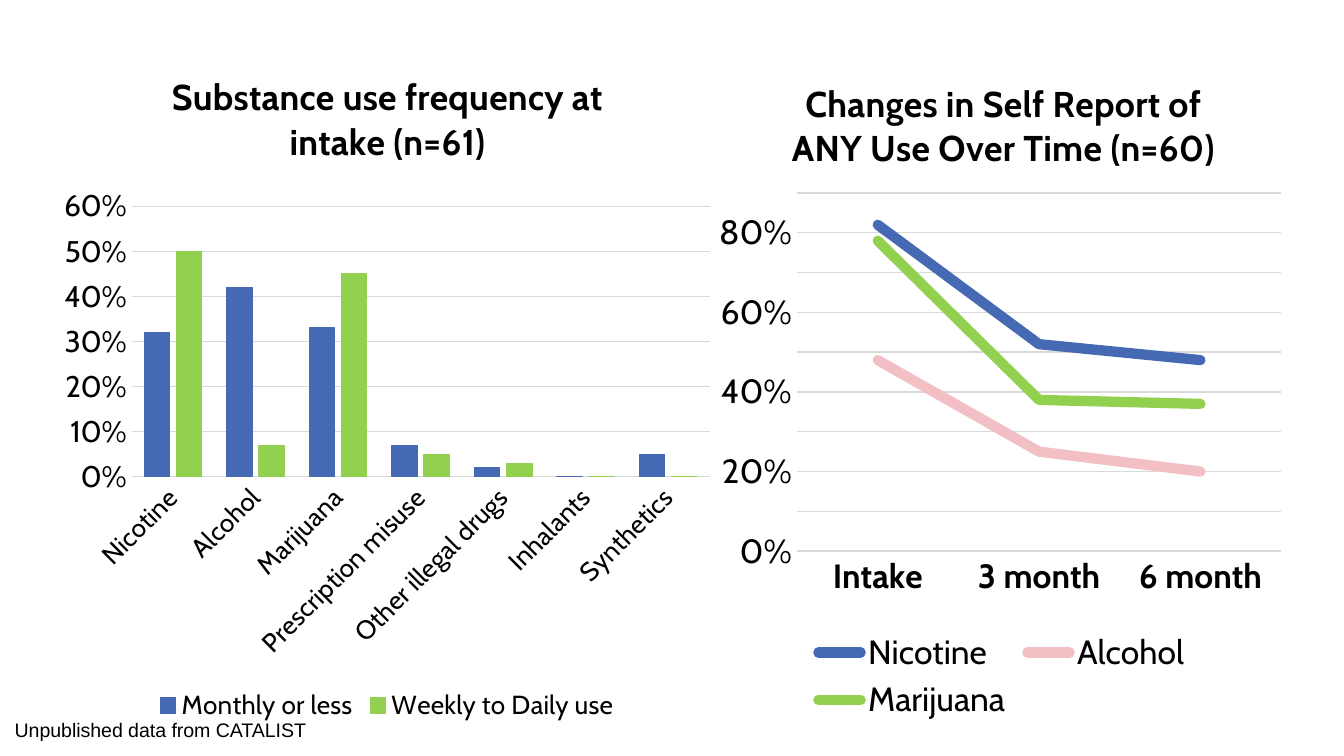
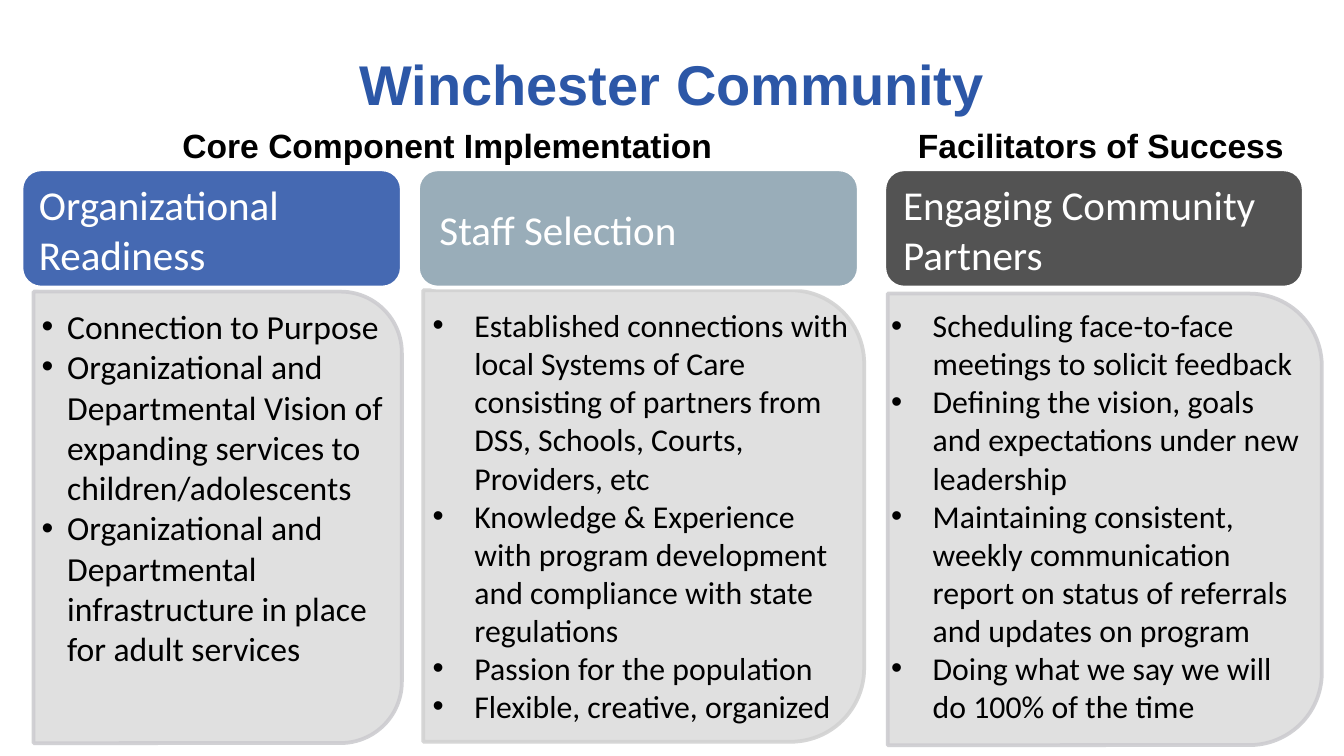
from lxml import etree
from pptx import Presentation
from pptx.chart.data import CategoryChartData
from pptx.dml.color import RGBColor
from pptx.enum.chart import XL_CHART_TYPE, XL_LEGEND_POSITION, XL_MARKER_STYLE, XL_TICK_MARK
from pptx.enum.shapes import MSO_SHAPE
from pptx.enum.text import MSO_ANCHOR, PP_ALIGN
from pptx.oxml import parse_xml
from pptx.oxml.ns import nsdecls, qn
from pptx.util import Inches, Pt

COLUMNS = XL_CHART_TYPE.COLUMN_CLUSTERED
LINES = XL_CHART_TYPE.LINE
BOTTOM = XL_LEGEND_POSITION.BOTTOM
NO_MARKER = XL_MARKER_STYLE.NONE
NO_TICK = XL_TICK_MARK.NONE
RECTANGLE = MSO_SHAPE.RECTANGLE
HEADER_SHAPE = MSO_SHAPE.ROUNDED_RECTANGLE
PANEL_SHAPE = MSO_SHAPE.ROUND_2_SAME_RECTANGLE
TOP, MIDDLE = MSO_ANCHOR.TOP, MSO_ANCHOR.MIDDLE
LEFT, CENTER = PP_ALIGN.LEFT, PP_ALIGN.CENTER

WHITE = RGBColor(0xFF, 0xFF, 0xFF)
BLACK = RGBColor(0x00, 0x00, 0x00)
BLUE = RGBColor(0x45, 0x69, 0xB2)
TITLE_BLUE = RGBColor(0x2C, 0x57, 0xA7)
GREEN = RGBColor(0x92, 0xD0, 0x50)
PINK = RGBColor(0xF2, 0xBF, 0xC4)
GRID = RGBColor(0xD9, 0xD9, 0xD9)
SLATE = RGBColor(0x99, 0xAD, 0xB9)
CHARCOAL = RGBColor(0x53, 0x53, 0x53)
PANEL_FILL = RGBColor(0xDD, 0xDD, 0xDD)
PANEL_LINE = RGBColor(0xCD, 0xCC, 0xD0)
PANEL_LINE_LIGHT = RGBColor(0xD2, 0xD2, 0xD2)


def add_text(page, place, lines, font, align=LEFT, anchor=TOP, inset=(0.05, 0.05), spacing=None, indent=0):
    box = page.shapes.add_textbox(*map(Inches, place))
    frame = box.text_frame
    frame.word_wrap = True
    frame.vertical_anchor = anchor
    frame.margin_left = frame.margin_right = Inches(inset[0])
    frame.margin_top = frame.margin_bottom = Inches(inset[1])
    for number, line in enumerate(lines):
        para = frame.paragraphs[0] if number == 0 else frame.add_paragraph()
        para.alignment = align
        para.line_spacing = spacing
        if indent:
            props = para._p.get_or_add_pPr()
            props.set("marL", str(Inches(indent)))
            props.set("indent", str(-Inches(indent)))
            etree.SubElement(props, qn("a:buFont")).set("typeface", "Arial")
            etree.SubElement(props, qn("a:buChar")).set("char", "•")
        span = para.add_run()
        span.text = line
        span.font.color.rgb = font["color"]
        for name in ("name", "size", "bold"):
            setattr(span.font, name, font.get(name))


def add_layout(parent, target, **fractions):
    old = parent.find(qn("c:layout"))
    if old is not None:
        parent.remove(old)
    values = "".join(f'<c:{key} val="{value}"/>' for key, value in fractions.items())
    layout = parse_xml(
        f'<c:layout {nsdecls("c")}><c:manualLayout>{target}'
        f'<c:xMode val="edge"/><c:yMode val="edge"/>{values}</c:manualLayout></c:layout>'
    )
    text = parent.find(qn("c:tx"))
    parent.insert(0 if text is None else 1, layout)


deck = Presentation()
deck.slide_width = Inches(10)
deck.slide_height = Inches(10 * 9 / 16)
blank = deck.slide_layouts[6]

page = deck.slides.add_slide(blank)
backing = page.shapes.add_shape(RECTANGLE, Inches(5.05), Inches(0.87), Inches(4.58), Inches(4.49))
backing.shadow.inherit = False
backing.fill.solid()
backing.fill.fore_color.rgb = WHITE
backing.line.fill.background()

charts = [
    {
        "kind": COLUMNS, "place": (0.38, 0.38, 5, 5.03),
        "title": "Substance use frequency at intake (n=61)",
        "title_at": {"x": 0.17, "y": 0.02},
        "plot_at": {"x": 0.12, "y": 0.23, "w": 0.86, "h": 0.4},
        "size": 16, "category_size": 14, "legend_size": 14, "bold": False,
        "top": 0.6, "step": 0.1, "tilt": -45,
        "categories": ["Nicotine", "Alcohol", "Marijuana", "Prescription misuse",
                       "Other illegal drugs", "Inhalants", "Synthetics"],
        "series": [
            ("Monthly or less", (0.32, 0.42, 0.33, 0.07, 0.02, 0, 0.05), BLUE),
            ("Weekly to Daily use", (0.5, 0.07, 0.45, 0.05, 0.03, 0, 0), GREEN),
        ],
    },
    {
        "kind": LINES, "place": (5.28, 0.38, 4.34, 5.03),
        "title": "Changes in Self Report of ANY Use Over Time (n=60)",
        "title_at": {"x": 0.13, "y": 0.03},
        "plot_at": {"x": 0.15, "y": 0.21, "w": 0.83, "h": 0.53},
        "size": 18, "category_size": 18, "legend_size": 18, "bold": True,
        "top": 0.9, "step": 0.1, "tilt": 0,
        "categories": ["Intake", "3 month", "6 month"],
        "series": [
            ("Nicotine", (0.82, 0.52, 0.48), BLUE),
            ("Alcohol", (0.48, 0.25, 0.2), PINK),
            ("Marijuana", (0.78, 0.38, 0.37), GREEN),
        ],
    },
]

for item in charts:
    data = CategoryChartData(number_format="0%")
    data.categories = item["categories"]
    for name, values, color in item["series"]:
        data.add_series(name, values)
    chart = page.shapes.add_chart(item["kind"], *map(Inches, item["place"]), data).chart
    chart.font.name = "Cabin"
    chart.font.size = Pt(item["size"])
    chart.font.color.rgb = BLACK

    chart.has_title = True
    frame = chart.chart_title.text_frame
    frame.text = item["title"]
    chart.has_legend = True
    legend = chart.legend
    legend.position = BOTTOM
    legend.include_in_layout = False
    category_axis, value_axis = chart.category_axis, chart.value_axis
    fonts = [
        (frame.paragraphs[0].runs[0].font, 19.2, True),
        (legend.font, item["legend_size"], False),
        (category_axis.tick_labels.font, item["category_size"], item["bold"]),
        (value_axis.tick_labels.font, item["size"], False),
    ]
    for font, size, bold in fonts:
        font.name = "Cabin"
        font.size = Pt(size)
        font.bold = bold
        font.color.rgb = BLACK

    for axis in (category_axis, value_axis):
        axis.major_tick_mark = axis.minor_tick_mark = NO_TICK
    value_axis.minimum_scale = 0
    value_axis.maximum_scale = item["top"]
    value_axis.major_unit = item["step"]
    value_axis.tick_labels.number_format = "0%"
    value_axis.tick_labels.number_format_is_linked = False
    value_axis.format.line.fill.background()
    for line in (category_axis.format.line, value_axis.major_gridlines.format.line):
        line.color.rgb = GRID
        line.width = Pt(0.75)
    body = category_axis._element.find(qn("c:txPr")).find(qn("a:bodyPr"))
    body.set("rot", str(item["tilt"] * 60000))
    body.set("vert", "horz")

    plot = chart.plots[0]
    plot.vary_by_categories = False
    if item["kind"] == COLUMNS:
        plot.gap_width = 99
        plot.overlap = -27
    for series, (name, values, color) in zip(plot.series, item["series"]):
        line = series.format.line
        line.color.rgb = color
        if item["kind"] == LINES:
            line.width = Pt(5.5)
            series.smooth = False
            series.marker.style = NO_MARKER
            series._element.find(qn("c:spPr")).find(qn("a:ln")).set("cap", "rnd")
        else:
            line.width = Pt(0.75)
            series.format.fill.solid()
            series.format.fill.fore_color.rgb = color
    add_layout(chart.chart_title._element, "", **item["title_at"])
    add_layout(chart._chartSpace.chart.plotArea, '<c:layoutTarget val="inner"/>', **item["plot_at"])

add_text(page, (0.06, 5.29, 3.87, 0.28), ["Unpublished data from CATALIST"],
         {"name": "Arial", "size": Pt(10.5), "color": BLACK})

page = deck.slides.add_slide(blank)
add_text(page, (0, 0.21, 10, 0.88), ["Winchester Community"],
         {"name": "Arial", "size": Pt(30), "bold": True, "color": TITLE_BLUE},
         align=CENTER, anchor=MIDDLE, spacing=0.9)

columns = [
    {
        "header": "Organizational Readiness", "color": BLUE, "line": PANEL_LINE,
        "header_at": (0.16, 2.83), "label_at": (0.22, 2.7),
        "panel_at": (-0.06, 2.48, 3.36, 2.74), "list_at": (0.28, 2.5, 2.67, 2.25),
        "size": 18, "indent": 0.19,
        "points": [
            "Connection to Purpose",
            "Organizational and Departmental Vision of expanding services to children/adolescents",
            "Organizational and Departmental infrastructure in place for adult services",
        ],
    },
    {
        "header": "Staff Selection", "color": SLATE, "line": PANEL_LINE_LIGHT,
        "header_at": (3.11, 3.28), "label_at": (3.2, 3.09),
        "panel_at": (3.11, 2.2, 3.36, 3.28), "list_at": (3.19, 1.96, 3.2, 3.75),
        "size": 17, "indent": 0.31,
        "points": [
            "Established connections with local Systems of Care consisting of partners from "
            "DSS, Schools, Courts, Providers, etc",
            "Knowledge & Experience with program development and compliance with state regulations",
            "Passion for the population",
            "Flexible, creative, organized",
        ],
    },
    {
        "header": "Engaging Community Partners", "color": CHARCOAL, "line": PANEL_LINE,
        "header_at": (6.58, 3.12), "label_at": (6.65, 2.99),
        "panel_at": (6.54, 2.25, 3.36, 3.23), "list_at": (6.6, 2.19, 3.11, 3.29),
        "size": 17, "indent": 0.31,
        "points": [
            "Scheduling face-to-face meetings to solicit feedback",
            "Defining the vision, goals and expectations under new leadership",
            "Maintaining consistent, weekly communication report on status of referrals "
            "and updates on program",
            "Doing what we say we will do 100% of the time",
        ],
    },
]

for column in columns:
    left, width = column["header_at"]
    shapes = [
        (PANEL_SHAPE, column["panel_at"], 90, PANEL_FILL, column["line"]),
        (HEADER_SHAPE, (left, 1.26, width, 0.88), 0, column["color"], WHITE),
    ]
    for kind, place, turn, fill, outline in shapes:
        shape = page.shapes.add_shape(kind, *map(Inches, place))
        shape.shadow.inherit = False
        shape.rotation = turn
        shape.fill.solid()
        shape.fill.fore_color.rgb = fill
        shape.line.color.rgb = outline
        shape.line.width = Pt(2)
        if kind == PANEL_SHAPE:
            for color in shape._element.spPr.iter(qn("a:srgbClr")):
                etree.SubElement(color, qn("a:alpha")).set("val", "90000")
    left, width = column["label_at"]
    add_text(page, (left, 1.31, width, 0.79), [column["header"]],
             {"name": "Calibri", "size": Pt(22), "color": WHITE},
             anchor=MIDDLE, inset=(0.07, 0.04))
    add_text(page, column["list_at"], column["points"],
             {"name": "Calibri", "size": Pt(column["size"]), "color": BLACK},
             anchor=MIDDLE, inset=(0.03, 0.02), indent=column["indent"])

heading = {"name": "Arial", "size": Pt(18), "bold": True, "color": BLACK}
add_text(page, (0.28, 0.93, 6.1, 0.34), ["Core Component Implementation"], heading,
         align=CENTER, spacing=0.85)
add_text(page, (6.78, 0.88, 3.12, 0.4), ["Facilitators of Success"], heading)

deck.save("out.pptx")
